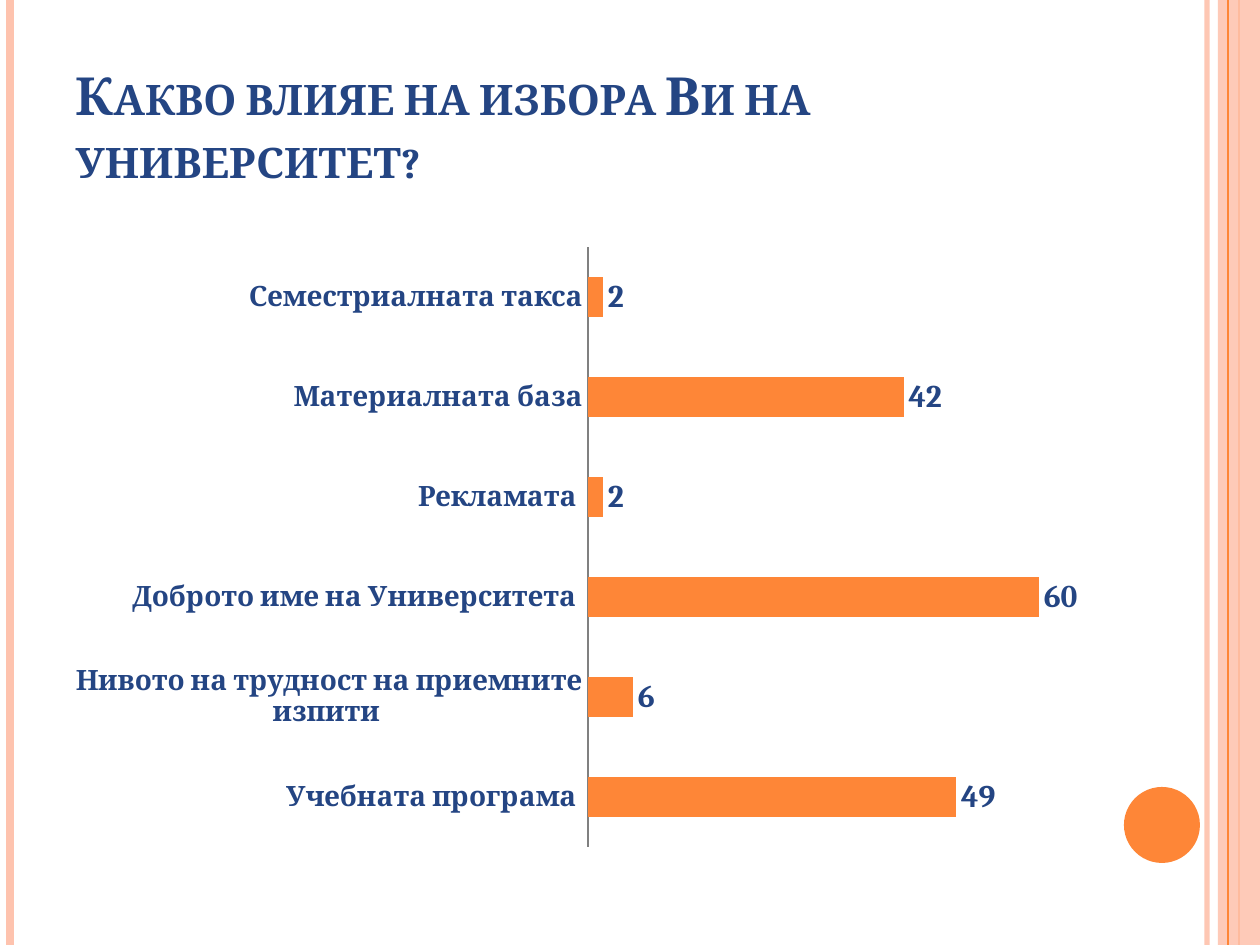
from lxml.etree import SubElement
from pptx import Presentation
from pptx.chart.data import CategoryChartData
from pptx.dml.color import RGBColor
from pptx.enum.chart import XL_CHART_TYPE, XL_LABEL_POSITION, XL_TICK_MARK
from pptx.enum.shapes import MSO_CONNECTOR, MSO_SHAPE
from pptx.enum.text import MSO_ANCHOR, PP_ALIGN
from pptx.oxml.ns import qn
from pptx.util import Emu, Pt

FONT = "Cambria"
NAVY, ORANGE, PEACH, GREY = "244583", "FE8637", "FEC3AE", "808080"
SLIDE_WIDTH, SLIDE_HEIGHT = 1260, 945
REASONS = [
    ("Учебната програма ", 49),
    ("Нивото на трудност на приемните изпити ", 6),
    ("Доброто име на Университета ", 60),
    ("Рекламата ", 2),
    ("Материалната база", 42),
    ("Семестриалната такса", 2),
]


def px(length):
    """Convert pixels at 126 to the inch into EMU."""
    return Emu(round(length * 914400 / 126))


def color(code):
    """Turn a hex string into a colour."""
    return RGBColor.from_string(code)


def set_opacity(element, percent):
    """Give every colour inside the element the same opacity."""
    for srgb in list(element.iter(qn("a:srgbClr"))):
        SubElement(srgb, qn("a:alpha"), val=str(percent * 1000))


def style_font(font, size):
    """Apply the bold navy lettering of the slide."""
    font.name, font.size, font.bold = FONT, Pt(size), True
    font.color.rgb = color(NAVY)


def add_stripe(slide, x, height, code, width, opacity=100):
    """Draw one vertical stripe down the slide."""
    stripe = slide.shapes.add_connector(MSO_CONNECTOR.STRAIGHT, px(x), 0, px(x), px(height))
    stripe.line.color.rgb = color(code)
    stripe.line.width = Pt(width)
    properties = stripe._element.spPr
    SubElement(properties, qn("a:effectLst"))
    if opacity < 100:
        set_opacity(properties, opacity)


def add_block(slide, preset, box, code, opacity=100):
    """Draw one plain filled shape without an outline."""
    block = slide.shapes.add_shape(preset, *map(px, box))
    block.shadow.inherit = False
    block.fill.solid()
    block.fill.fore_color.rgb = color(code)
    block.line.fill.background()
    if opacity < 100:
        set_opacity(block._element.spPr, opacity)


def add_frame(slide, box):
    """Draw the side stripes, the right band and the disc."""
    left, top, width, height = box
    right = left + width
    add_stripe(slide, right - 53, height, PEACH, 3, 93)
    add_stripe(slide, left + 10, height, PEACH, 4.5)
    add_stripe(slide, right - 21, height, ORANGE, 1.5)
    add_block(slide, MSO_SHAPE.RECTANGLE, (right - 42, top, 42, height), PEACH, 87)
    add_stripe(slide, right - 32, height, ORANGE, 0.75)
    add_block(slide, MSO_SHAPE.OVAL, (right - 136, height - 158, 76, 76), ORANGE)


def add_title(slide, box, wording):
    """Place the question in the title placeholder."""
    title = slide.shapes.title
    title.left, title.top, title.width, title.height = map(px, box)
    frame = title.text_frame
    frame.word_wrap = True
    frame.vertical_anchor = MSO_ANCHOR.BOTTOM
    paragraph = frame.paragraphs[0]
    paragraph.alignment = PP_ALIGN.LEFT
    run = paragraph.add_run()
    run.text = wording
    style_font(run.font, 30)
    run._r.get_or_add_rPr().set("cap", "small")


def set_plot_area(chart, box, plot_box):
    """Fix the inner plot area, given relative to the chart box."""
    plot_area = chart._chartSpace.chart.plotArea
    for old in plot_area.findall(qn("c:layout")):
        plot_area.remove(old)
    layout = plot_area.makeelement(qn("c:layout"))
    plot_area.insert(0, layout)
    manual = SubElement(layout, qn("c:manualLayout"))
    SubElement(manual, qn("c:layoutTarget"), val="inner")
    for tag in ("xMode", "yMode"):
        SubElement(manual, qn(f"c:{tag}"), val="edge")
    for tag, part, whole in zip("xywh", plot_box, box[2:] * 2):
        SubElement(manual, qn(f"c:{tag}"), val=f"{part / whole:.4f}")


def add_reasons_chart(slide, box, reasons):
    """Draw the bar chart of reasons with value labels."""
    answers = CategoryChartData()
    answers.categories = [reason for reason, _ in reasons]
    answers.add_series("Series 1", [votes for _, votes in reasons])
    chart = slide.shapes.add_chart(XL_CHART_TYPE.BAR_CLUSTERED, *map(px, box), answers).chart
    chart.has_legend = False
    chart.has_title = False
    style_font(chart.font, 16)
    set_plot_area(chart, box, (534, 13, 526, 600))

    reason_axis = chart.category_axis
    reason_axis.major_tick_mark = XL_TICK_MARK.NONE
    reason_axis.format.line.color.rgb = color(GREY)
    reason_axis.format.line.width = Pt(0.75)
    style_font(reason_axis.tick_labels.font, 16)

    votes_axis = chart.value_axis
    votes_axis.minimum_scale, votes_axis.maximum_scale = 0, 70
    votes_axis.has_major_gridlines = False
    votes_axis.visible = False

    plot = chart.plots[0]
    plot.gap_width = 150
    plot.vary_by_categories = False
    bars = plot.series[0]
    bars.format.fill.solid()
    bars.format.fill.fore_color.rgb = color(ORANGE)
    labels = bars.data_labels
    labels.show_value = True
    labels.position = XL_LABEL_POSITION.OUTSIDE_END
    style_font(labels.font, 18)


def main():
    """Build and save the slide."""
    presentation = Presentation()
    presentation.slide_width, presentation.slide_height = px(SLIDE_WIDTH), px(SLIDE_HEIGHT)
    slide = presentation.slides.add_slide(presentation.slide_layouts[5])
    add_frame(slide, (0, 0, SLIDE_WIDTH, SLIDE_HEIGHT))
    add_title(slide, (63, 38, 1029, 157), "Какво влияе на избора Ви на университет?")
    add_reasons_chart(slide, (54, 234, 1081, 625), REASONS)
    presentation.save("out.pptx")


if __name__ == "__main__":
    main()
